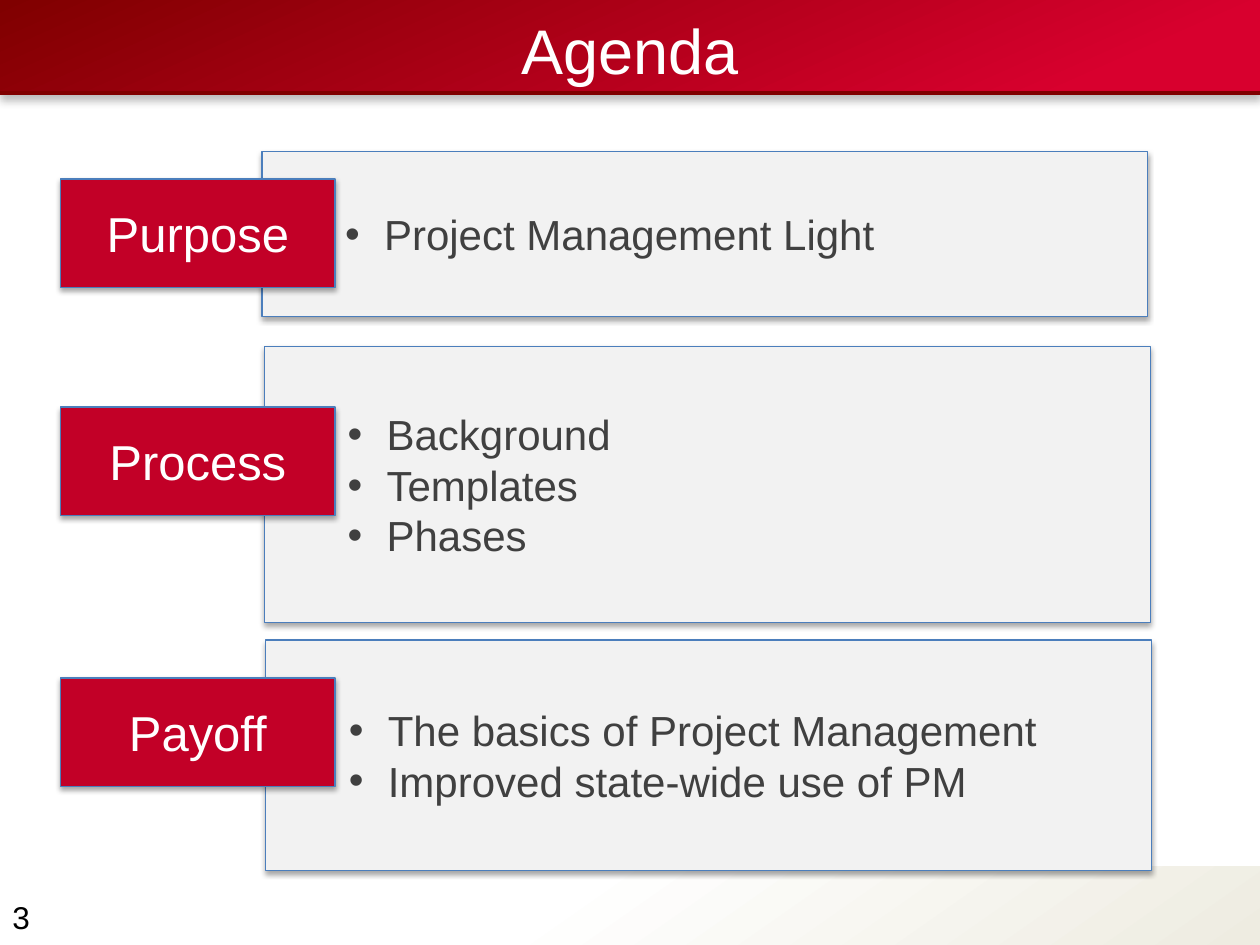
"""Builds the agenda slide: three labelled panels under a red title band."""
from lxml.etree import SubElement
from pptx import Presentation
from pptx.dml.color import RGBColor
from pptx.enum.shapes import MSO_CONNECTOR, MSO_SHAPE
from pptx.enum.text import MSO_ANCHOR, PP_ALIGN
from pptx.oxml.ns import qn
from pptx.util import Emu, Inches, Pt

WIDTH, HEIGHT = Inches(10), Inches(7.5)
FONT = "Arial"
COLORS = {
    "white": "FFFFFF", "black": "000000", "cream": "EEECE1", "maroon": "800000",
    "crimson": "D8002E", "label": "C20027", "panel": "F2F2F2",
    "outline": "4B7EBC", "body": "404040",
}
PANEL_WIDTH = 70.3
LABEL_LEFT, LABEL_WIDTH, LABEL_HEIGHT = 4.8, 21.8, 11.47
SECTIONS = [
    ("Purpose", 18.93, (20.8, 16, PANEL_WIDTH, 17.47), ["Project Management Light"]),
    ("Process", 43.07, (21, 36.67, PANEL_WIDTH, 29.2),
     ["Background", "Templates", "Phases"]),
    ("Payoff", 71.73, (21.1, 67.73, PANEL_WIDTH, 24.4),
     ["The basics of Project Management", "Improved state-wide use of PM"]),
]


def color(name):
    return RGBColor.from_string(COLORS[name])


def share(left, top, width, height):
    """Turn percentages of the slide's size into lengths."""
    return [Emu(round(percent * side / 100)) for percent, side in
            zip((left, top, width, height), (WIDTH, HEIGHT) * 2)]


def format_text(frame, size, color_name, align=PP_ALIGN.LEFT):
    for paragraph in frame.paragraphs:
        paragraph.alignment = align
        for run in paragraph.runs:
            run.font.name = FONT
            run.font.size = Pt(size)
            run.font.color.rgb = color(color_name)


def add_shadow(shape, opacity, blur, distance):
    """Give the shape a black shadow that falls straight down."""
    shape.shadow.inherit = False
    effects = shape.element.spPr.find(qn("a:effectLst"))
    shadow = SubElement(effects, qn("a:outerShdw"), blurRad=str(Pt(blur)),
                        dist=str(Pt(distance)), dir="5400000", rotWithShape="0")
    tint = SubElement(shadow, qn("a:srgbClr"), val=COLORS["black"])
    SubElement(tint, qn("a:alpha"), val=str(opacity * 1000))


def add_band(slide, place, stops, angle):
    """Add a borderless band with a two-stop gradient, angle clockwise."""
    band = slide.shapes.add_shape(MSO_SHAPE.RECTANGLE, *share(*place))
    band.shadow.inherit = False
    band.line.fill.background()
    band.fill.gradient()
    band.fill.gradient_angle = 360 - angle
    for stop, (position, name) in zip(band.fill.gradient_stops, stops):
        stop.position = position
        stop.color.rgb = color(name)
    return band


def add_rule(slide, top, width):
    left, y, length, _ = share(0, top, width, 0)
    rule = slide.shapes.add_connector(MSO_CONNECTOR.STRAIGHT, left, y, length, y)
    rule.line.color.rgb = color("maroon")
    rule.line.width = Pt(2)
    SubElement(rule.element.spPr, qn("a:effectLst"))


def add_box(slide, place, fill, lines):
    """Add an outlined, shadowed rectangle that holds the given lines."""
    box = slide.shapes.add_shape(MSO_SHAPE.RECTANGLE, *share(*place))
    box.fill.solid()
    box.fill.fore_color.rgb = color(fill)
    box.line.color.rgb = color("outline")
    box.line.width = Pt(0.75)
    add_shadow(box, 35, 3.1, 1.8)
    box.text_frame.text = "\n".join(lines)
    box.text_frame.word_wrap = True
    box.text_frame.vertical_anchor = MSO_ANCHOR.MIDDLE
    return box.text_frame


def add_panel(slide, place, lines):
    frame = add_box(slide, place, "panel", lines)
    for paragraph in frame.paragraphs:
        properties = paragraph._p.get_or_add_pPr()
        properties.set("marL", str(Inches(0.87)))
        properties.set("indent", str(Inches(-0.31)))
        SubElement(properties, qn("a:buFont"), typeface=FONT)
        SubElement(properties, qn("a:buChar"), char="•")
    format_text(frame, 24, "body")


def add_label(slide, top, text):
    place = (LABEL_LEFT, top, LABEL_WIDTH, LABEL_HEIGHT)
    frame = add_box(slide, place, "label", [text])
    format_text(frame, 28, "white", PP_ALIGN.CENTER)


def add_page_number(slide, number):
    box = slide.shapes.add_textbox(*share(0, 94.4, 5.8, 5.33))
    box.text_frame.word_wrap = True
    box.text_frame.text = number
    format_text(box.text_frame, 18, "black")


def set_title(slide, text):
    """Place the title placeholder in front of the band."""
    title = slide.shapes.title
    title.element.getparent().append(title.element)
    title.left, title.top, title.width, title.height = share(0, 0.4, 100, 9.73)
    title.text_frame.text = text
    title.text_frame.vertical_anchor = MSO_ANCHOR.MIDDLE
    format_text(title.text_frame, 36, "white", PP_ALIGN.CENTER)


def main():
    deck = Presentation()
    deck.slide_width, deck.slide_height = WIDTH, HEIGHT
    slide = deck.slides.add_slide(deck.slide_layouts[5])
    add_band(slide, (0, 91.73, 100, 8.27), [(0.43, "white"), (1, "cream")], 55)
    header = add_band(slide, (0, 0, 100.1, 9.87), [(0, "maroon"), (0.87, "crimson")], 66)
    add_shadow(header, 25, 5, 3.8)
    add_rule(slide, 9.87, 100.1)
    add_page_number(slide, "3")
    set_title(slide, "Agenda")
    for name, label_top, panel_place, lines in SECTIONS:
        add_panel(slide, panel_place, lines)
        add_label(slide, label_top, name)
    deck.save("out.pptx")


if __name__ == "__main__":
    main()
